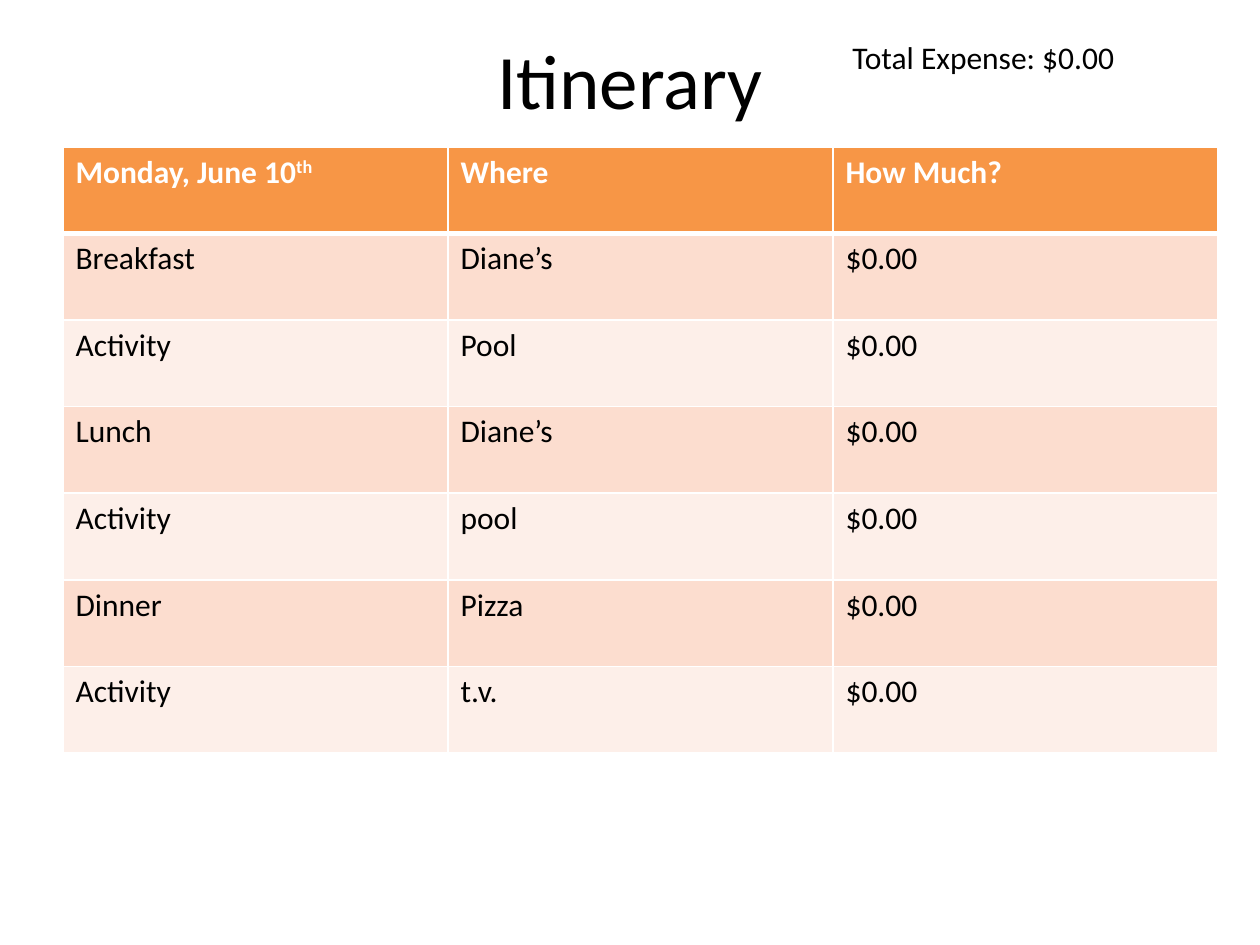
import dataclasses

import lxml.etree
import pptx
import pptx.dml.color
import pptx.enum.text
import pptx.oxml.ns
import pptx.util

PX = 914400 / 126

DAY = "Monday, June 10"
HEADINGS = [DAY, "Where", "How Much?"]
PLANS = [
    ("Breakfast", "Diane’s", "$0.00"),
    ("Activity", "Pool", "$0.00"),
    ("Lunch", "Diane’s", "$0.00"),
    ("Activity", "pool", "$0.00"),
    ("Dinner", "Pizza", "$0.00"),
    ("Activity", "t.v.", "$0.00"),
]


@dataclasses.dataclass(frozen=True)
class Theme:
    font: str = "Calibri"
    title_size: int = 44
    body_size: int = 18
    ink: str = "000000"
    white: str = "FFFFFF"
    header_fill: str = "F79646"
    bands: tuple = ("FCDDCF", "FDEFE9")
    rule: int = 1
    header_rule: int = 3


THEME = Theme()


def emu(px):
    return pptx.util.Emu(round(px * PX))


def add_run(paragraph, text, size, color, bold=False):
    run = paragraph.add_run()
    run.text = text
    formats = {"name": THEME.font, "size": pptx.util.Pt(size), "bold": bold}
    for attribute, value in formats.items():
        setattr(run.font, attribute, value)
    run.font.color.rgb = pptx.dml.color.RGBColor.from_string(color)
    return run


def add_label(slide, box, text, size, align, anchor):
    frame = slide.shapes.add_textbox(*map(emu, box)).text_frame
    for attribute, value in {"word_wrap": True, "vertical_anchor": anchor}.items():
        setattr(frame, attribute, value)
    paragraph = frame.paragraphs[0]
    paragraph.alignment = align
    add_run(paragraph, text, size, THEME.ink)


def set_borders(cell, widths):
    """Draw white cell edges; widths maps L, R, T, B (in that order) to points."""
    properties = cell._tc.get_or_add_tcPr()
    qn = pptx.oxml.ns.qn
    for side, width in widths.items():
        line = lxml.etree.SubElement(
            properties, qn(f"a:ln{side}"), w=str(pptx.util.Pt(width)))
        fill = lxml.etree.SubElement(line, qn("a:solidFill"))
        lxml.etree.SubElement(fill, qn("a:srgbClr"), val=THEME.white)


def fill_cell(cell, text, row):
    is_header = row == 0
    set_borders(cell, {
        "L": THEME.rule,
        "R": THEME.rule,
        "T": THEME.header_rule if row == 1 else THEME.rule,
        "B": THEME.header_rule if is_header else THEME.rule,
    })
    background = THEME.header_fill if is_header else THEME.bands[(row - 1) % 2]
    cell.fill.solid()
    cell.fill.fore_color.rgb = pptx.dml.color.RGBColor.from_string(background)
    color = THEME.white if is_header else THEME.ink
    paragraph = cell.text_frame.paragraphs[0]
    add_run(paragraph, text, THEME.body_size, color, is_header)
    if text == DAY:
        ordinal = add_run(paragraph, "th", THEME.body_size, color, is_header)
        ordinal._r.get_or_add_rPr().set("baseline", "30000")


def add_itinerary(slide, box):
    rows = [HEADINGS, *PLANS]
    itinerary = slide.shapes.add_table(
        len(rows), len(HEADINGS), *map(emu, box)).table
    for row, texts in enumerate(rows):
        for column, text in enumerate(texts):
            fill_cell(itinerary.cell(row, column), text, row)


def main():
    deck = pptx.Presentation()
    deck.slide_width, deck.slide_height = emu(1260), emu(945)
    slide = deck.slides.add_slide(deck.slide_layouts[6])
    align, anchor = pptx.enum.text.PP_ALIGN, pptx.enum.text.MSO_ANCHOR
    add_label(slide, (63, 0, 1134, 158), "Itinerary",
              THEME.title_size, align.CENTER, anchor.MIDDLE)
    add_label(slide, (840, 32, 388, 51), "Total Expense: $0.00",
              THEME.body_size, align.LEFT, anchor.TOP)
    add_itinerary(slide, (63, 147, 1155, 606))
    deck.save("out.pptx")


if __name__ == "__main__":
    main()
